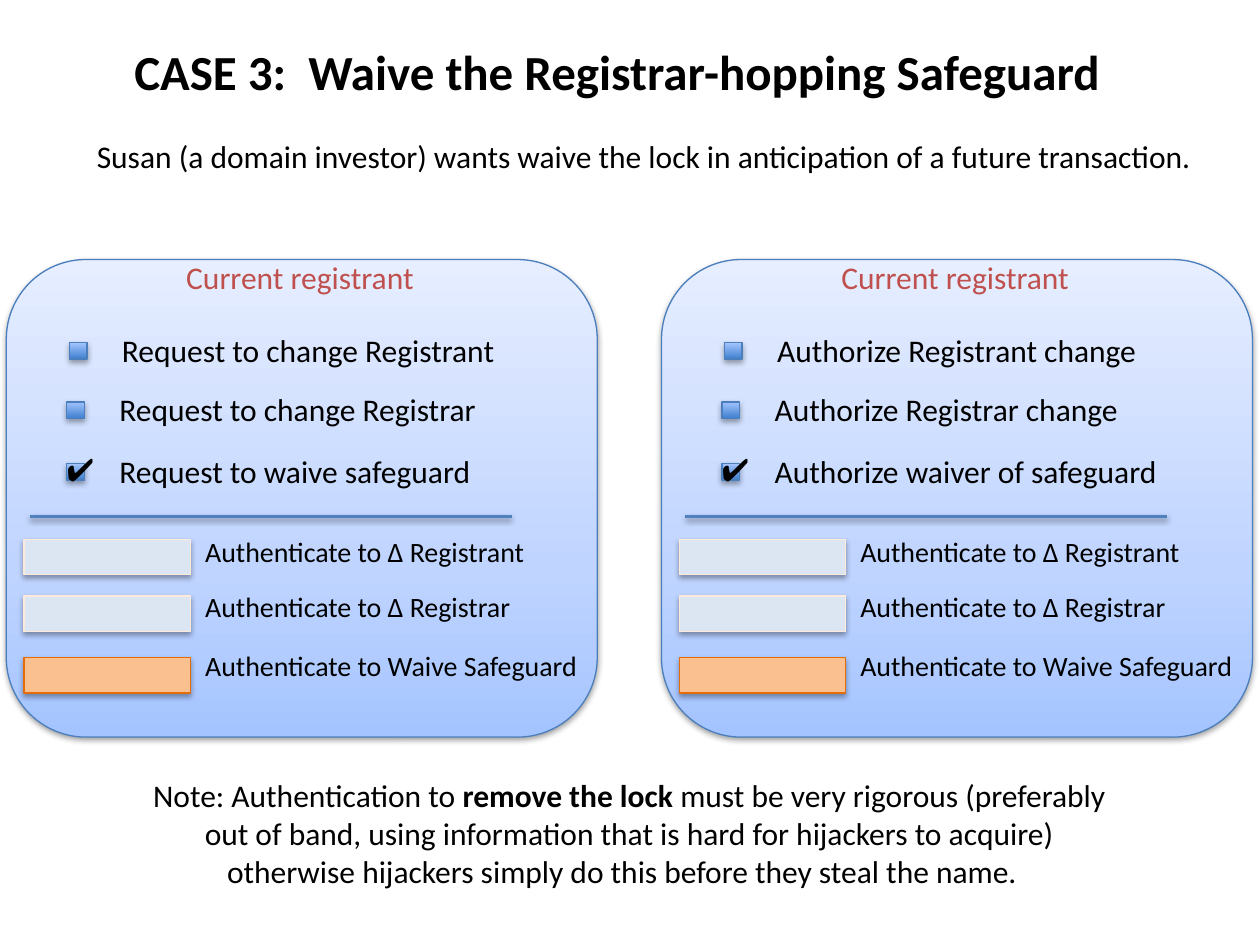
import copy
import pptx
import pptx.dml.color
import pptx.enum.dml
import pptx.enum.shapes
import pptx.enum.text
import pptx.oxml
import pptx.oxml.ns
import pptx.util

Inches = pptx.util.Inches
Pt = pptx.util.Pt
RGBColor = pptx.dml.color.RGBColor
Shape = pptx.enum.shapes.MSO_SHAPE

BLACK = RGBColor(0x00, 0x00, 0x00)
RED = RGBColor(0xC0, 0x50, 0x4D)
OUTLINE = RGBColor(0x4B, 0x7E, 0xBC)
DIVIDER = RGBColor(0x4F, 0x81, 0xBD)
PANEL_LOW = RGBColor(0xA4, 0xC4, 0xFF)
PANEL_MID = RGBColor(0xBF, 0xD4, 0xFF)
PANEL_HIGH = RGBColor(0xE6, 0xEE, 0xFF)
CHECK_LOW = RGBColor(0x3F, 0x80, 0xCE)
PALE_BLUE = RGBColor(0xDC, 0xE6, 0xF2)
CREAM = RGBColor(0xFD, 0xEA, 0xDA)
PEACH = RGBColor(0xFA, 0xC0, 0x90)
ORANGE = RGBColor(0xE4, 0x6C, 0x0A)

deck = pptx.Presentation()
deck.slide_width = Inches(10)
deck.slide_height = Inches(7.5)
page = deck.slides.add_slide(deck.slide_layouts[6])


def finish(item, line_color, line_width, distance, opacity, stops=()):
    item.line.color.rgb = line_color
    item.line.width = Pt(line_width)
    if stops:
        item.fill.gradient()
        item.fill.gradient_angle = 90
        stop_list = item._element.spPr.find(".//" + pptx.oxml.ns.qn("a:gsLst"))
        for _ in stops[2:]:
            stop_list.append(copy.deepcopy(stop_list[-1]))
        for stop, (position, color) in zip(item.fill.gradient_stops, stops):
            stop.position = position
            stop.color.rgb = color
    item._element.spPr.append(pptx.oxml.parse_xml(
        f'<a:effectLst {pptx.oxml.ns.nsdecls("a")}>'
        f'<a:outerShdw blurRad="40000" dist="{distance}" dir="5400000" rotWithShape="0">'
        f'<a:srgbClr val="000000"><a:alpha val="{opacity}"/></a:srgbClr>'
        '</a:outerShdw></a:effectLst>'))


def add_text(left, top, width, height, parts, size, color=BLACK,
             font="Calibri", wrap=False, centered=False):
    box = page.shapes.add_textbox(Inches(left), Inches(top), Inches(width), Inches(height))
    box.text_frame.word_wrap = wrap
    box.text_frame.auto_size = pptx.enum.text.MSO_AUTO_SIZE.SHAPE_TO_FIT_TEXT
    para = box.text_frame.paragraphs[0]
    para.font.size = Pt(size)
    para.font.name = font
    para.font.color.rgb = color
    if centered:
        para.alignment = pptx.enum.text.PP_ALIGN.CENTER
    for words, bold in parts:
        span = para.add_run()
        span.text = words
        if bold:
            span.font.bold = True


add_text(0.68, 0.28, 8.52, 0.57,
         [("CASE 3:  Waive the Registrar-hopping Safeguard ", True)],
         28, wrap=True, centered=True)
add_text(0.67, 1.04, 8.94, 0.4,
         [("Susan (a domain investor) wants waive the lock in anticipation "
           "of a future transaction.", False)], 18, wrap=True)

panels = [
    (0, [("Request to change Registrant", 3.33),
         ("Request to change Registrar", 3.2),
         ("Request to waive safeguard", 3.04)]),
    (5.2, [("Authorize Registrant change", 3.1),
           ("Authorize Registrar change", 2.97),
           ("Authorize waiver of safeguard", 3.29)]),
]
check_places = [(0.55, 2.72), (0.53, 3.19), (0.53, 3.68)]
fields = [
    ("Authenticate to Δ Registrant", 2.79, 4.19, 4.28, PALE_BLUE, CREAM),
    ("Authenticate to Δ Registrar", 2.68, 4.63, 4.73, PALE_BLUE, CREAM),
    ("Authenticate to Waive Safeguard", 3.22, 5.1, 5.22, PEACH, ORANGE),
]

for offset, options in panels:
    panel = page.shapes.add_shape(Shape.ROUNDED_RECTANGLE, Inches(offset + 0.05),
                                  Inches(2.06), Inches(4.69), Inches(3.79))
    finish(panel, OUTLINE, 0.75, 20000, 38000,
           [(0, PANEL_LOW), (0.35, PANEL_MID), (1, PANEL_HIGH)])
    add_text(offset + 1.38, 2, 2.04, 0.4, [("Current registrant", False)], 18, RED)

    for (option, width), (left, top) in zip(options, check_places):
        checkbox = page.shapes.add_shape(Shape.RECTANGLE, Inches(offset + left),
                                         Inches(top), Inches(0.14), Inches(0.13))
        finish(checkbox, OUTLINE, 0.75, 23000, 35000, [(0, CHECK_LOW), (1, PANEL_LOW)])
        add_text(offset + left + 0.32, top - 0.14, width, 0.4, [(option, False)], 18)
    add_text(offset + 0.43, 3.52, 0.43, 0.4, [("✔", False)], 18, font="Arial")

    divider = page.shapes.add_connector(
        pptx.enum.shapes.MSO_CONNECTOR.STRAIGHT,
        Inches(offset + 4.06), Inches(4.1), Inches(offset + 0.24), Inches(4.1))
    finish(divider, DIVIDER, 2, 20000, 38000)

    for label, width, label_top, field_top, fill_color, line_color in fields:
        add_text(offset + 1.53, label_top, width, 0.37, [(label, False)], 16)
        field = page.shapes.add_shape(Shape.RECTANGLE, Inches(offset + 0.19),
                                      Inches(field_top), Inches(1.32), Inches(0.28))
        field.fill.solid()
        field.fill.fore_color.rgb = fill_color
        finish(field, line_color, 0.75, 23000, 35000)

add_text(1.07, 6.11, 7.85, 1.01,
         [("Note: Authentication to ", False),
          ("remove the lock ", True),
          ("must be very rigorous (preferably out of band, using information that is "
           "hard for hijackers to acquire) otherwise hijackers simply do this before "
           "they steal the name.  ", False)],
         18, wrap=True, centered=True)

deck.save("out.pptx")
